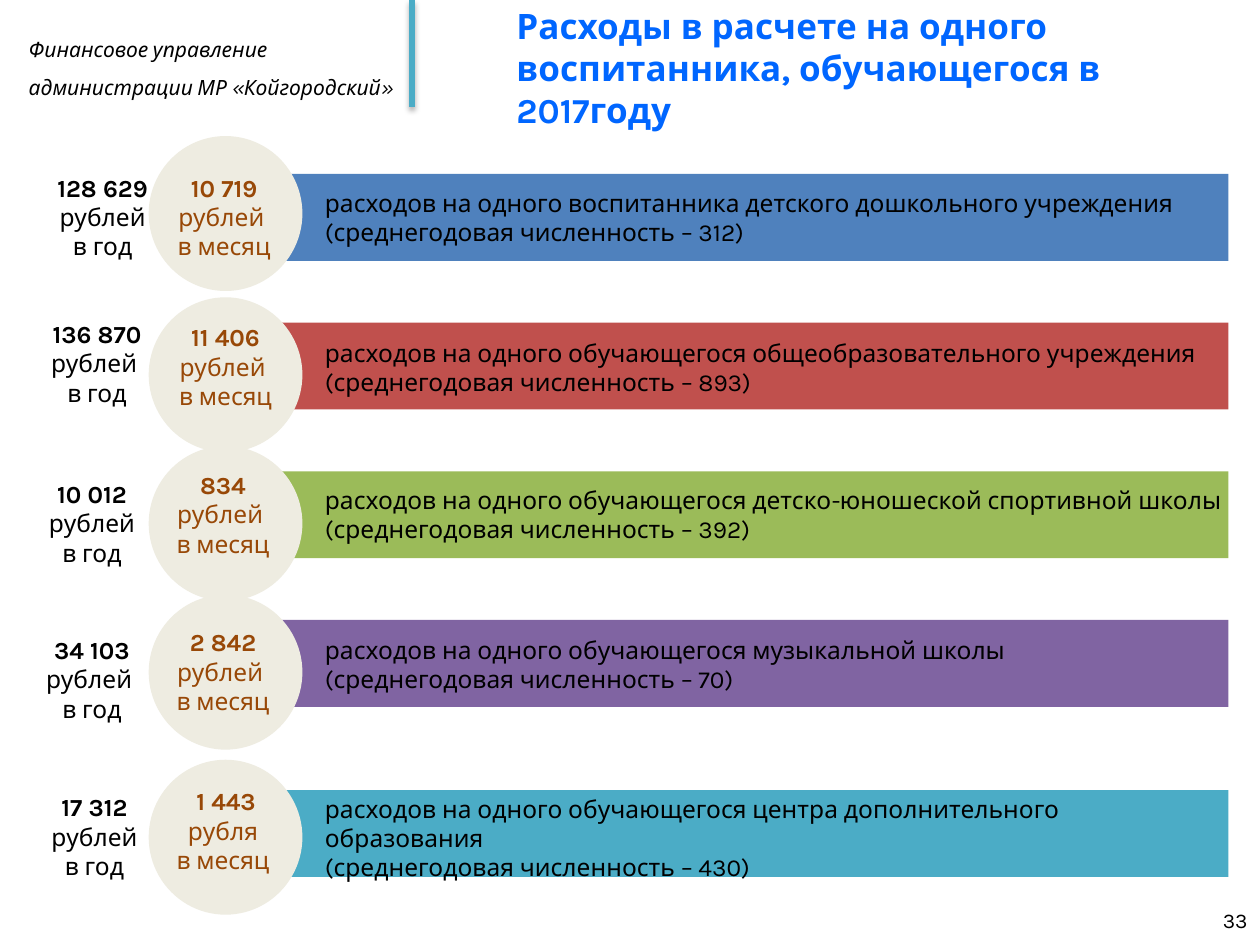
from lxml import etree
from pptx import Presentation
from pptx.dml.color import RGBColor
from pptx.enum.shapes import MSO_CONNECTOR, MSO_SHAPE
from pptx.enum.text import MSO_ANCHOR, PP_ALIGN
from pptx.oxml import parse_xml
from pptx.oxml.ns import nsdecls, qn
from pptx.util import Inches, Pt

LEFT, CENTER, RIGHT = PP_ALIGN.LEFT, PP_ALIGN.CENTER, PP_ALIGN.RIGHT
TOP, MIDDLE = MSO_ANCHOR.TOP, MSO_ANCHOR.MIDDLE
RECTANGLE, OVAL = MSO_SHAPE.RECTANGLE, MSO_SHAPE.OVAL

FONT = "Karla"
BLACK = RGBColor(0x00, 0x00, 0x00)
TITLE_BLUE = RGBColor(0x00, 0x66, 0xFF)
BROWN = RGBColor(0x98, 0x48, 0x07)
CREAM = RGBColor(0xEE, 0xEC, 0xE1)
BLUE = RGBColor(0x4F, 0x81, 0xBD)
RED = RGBColor(0xC0, 0x50, 0x4D)
GREEN = RGBColor(0x9B, 0xBB, 0x59)
PURPLE = RGBColor(0x80, 0x64, 0xA2)
TEAL = RGBColor(0x4B, 0xAC, 0xC6)

DEPARTMENT = ["Финансовое управление", "администрации МР «Койгородский»"]
TITLE = ["Расходы в расчете на одного воспитанника, обучающегося в 2017году"]
PAGE_NUMBER = ["33"]

# Tops: bar, circle, caption; yearly and monthly sums carry (left, top, width)
ROWS = [
    dict(color=BLUE, tops=(1.38, 1.08, 1.44),
         year=["128 629", "рублей", "в год"], year_at=(0.28, 1.32, 1.07),
         month=["10 719", "рублей ", "в месяц"], month_at=(1.21, 1.32, 1.14),
         caption=["расходов на одного воспитанника детского дошкольного учреждения "
                  "(среднегодовая численность – 312)"]),
    dict(color=RED, tops=(2.56, 2.36, 2.63),
         year=["136 870", "рублей ", "в год"], year_at=(0.26, 2.48, 1.02),
         month=["11 406", "рублей ", "в месяц"], month_at=(1.28, 2.51, 1.02),
         caption=["расходов на одного обучающегося общеобразовательного учреждения "
                  "(среднегодовая численность – 893)"]),
    dict(color=GREEN, tops=(3.74, 3.54, 3.8),
         year=["10 012", "рублей", "в год"], year_at=(0.22, 3.75, 1.02),
         month=["834", "рублей ", "в месяц"], month_at=(1.26, 3.68, 1.02),
         caption=["расходов на одного обучающегося детско-юношеской спортивной школы "
                  "(среднегодовая численность – 392)"]),
    dict(color=PURPLE, tops=(4.92, 4.72, 4.99),
         year=["34 103", "рублей ", "в год"], year_at=(0.22, 4.99, 1.02),
         month=["2 842", "рублей ", "в месяц"], month_at=(1.26, 4.93, 1.02),
         caption=["расходов на одного обучающегося музыкальной школы",
                  "(среднегодовая численность – 70)"]),
    dict(color=TEAL, tops=(6.27, 6.03, 6.25),
         year=["17 312", "рублей", "в год"], year_at=(0.24, 6.24, 1.02),
         month=[" 1 443", "рубля", "в месяц"], month_at=(1.26, 6.19, 1.02),
         caption=["расходов на одного обучающегося центра дополнительного образования",
                  "(среднегодовая численность – 430)"]),
]


def add_text(slide, lines, left, top, width, height, size=14, color=BLACK,
             bold_lines=0, italic=False, align=LEFT, anchor=TOP, spacing=None):
    box = slide.shapes.add_textbox(*map(Inches, (left, top, width, height)))
    frame = box.text_frame
    frame.word_wrap = True
    frame.vertical_anchor = anchor
    for index, line in enumerate(lines):
        para = frame.paragraphs[0] if index == 0 else frame.add_paragraph()
        para.alignment = align
        para.line_spacing = spacing
        span = para.add_run()
        span.text = line
        span.font.name = FONT
        span.font.size = Pt(size)
        span.font.color.rgb = color
        span.font.bold = index < bold_lines
        span.font.italic = italic


def add_filled(slide, kind, color, left, top, width, height):
    shape = slide.shapes.add_shape(kind, *map(Inches, (left, top, width, height)))
    shape.shadow.inherit = False
    shape.fill.solid()
    shape.fill.fore_color.rgb = color
    shape.line.fill.background()


def add_header_rule(slide):
    x = Inches(3.27)
    rule = slide.shapes.add_connector(MSO_CONNECTOR.STRAIGHT, x, 0, x, Inches(0.85))
    rule.line.color.rgb = TEAL
    rule.line.width = Pt(3)
    effects = parse_xml(f"<a:effectLst {nsdecls('a')}/>")
    shadow = etree.SubElement(effects, qn("a:outerShdw"), blurRad=str(Pt(3.1)),
                              dist=str(Pt(1.8)), dir="5400000", rotWithShape="0")
    tint = etree.SubElement(shadow, qn("a:srgbClr"), val="000000")
    etree.SubElement(tint, qn("a:alpha"), val="35000")
    rule.element.spPr.append(effects)


def main():
    deck = Presentation()
    deck.slide_width, deck.slide_height = Inches(10), Inches(7.5)
    page = deck.slides.add_slide(deck.slide_layouts[6])

    # Header
    add_text(page, DEPARTMENT, 0.13, 0.14, 3.14, 0.71, size=12, italic=True, spacing=1.5)
    add_header_rule(page)
    add_text(page, TITLE, 4, 0.03, 4.88, 1.01, size=20, color=TITLE_BLUE,
             bold_lines=1, anchor=MIDDLE)

    # One bar, circle and set of labels per type of institution
    for row in ROWS:
        bar_top, circle_top, caption_top = row["tops"]
        add_filled(page, RECTANGLE, row["color"], 2.16, bar_top, 7.59, 0.69)
        add_filled(page, OVAL, CREAM, 1.18, circle_top, 1.22, 1.23)
        add_text(page, row["year"], *row["year_at"], 0.81, bold_lines=1, align=CENTER)
        add_text(page, row["month"], *row["month_at"], 0.81, color=BROWN,
                 bold_lines=1, align=CENTER)
        add_text(page, row["caption"], 2.48, caption_top, 7.32, 0.57)

    # Page number
    add_text(page, PAGE_NUMBER, 7.67, 7.1, 2.33, 0.4, size=12, align=RIGHT, anchor=MIDDLE)
    deck.save("out.pptx")


if __name__ == "__main__":
    main()
